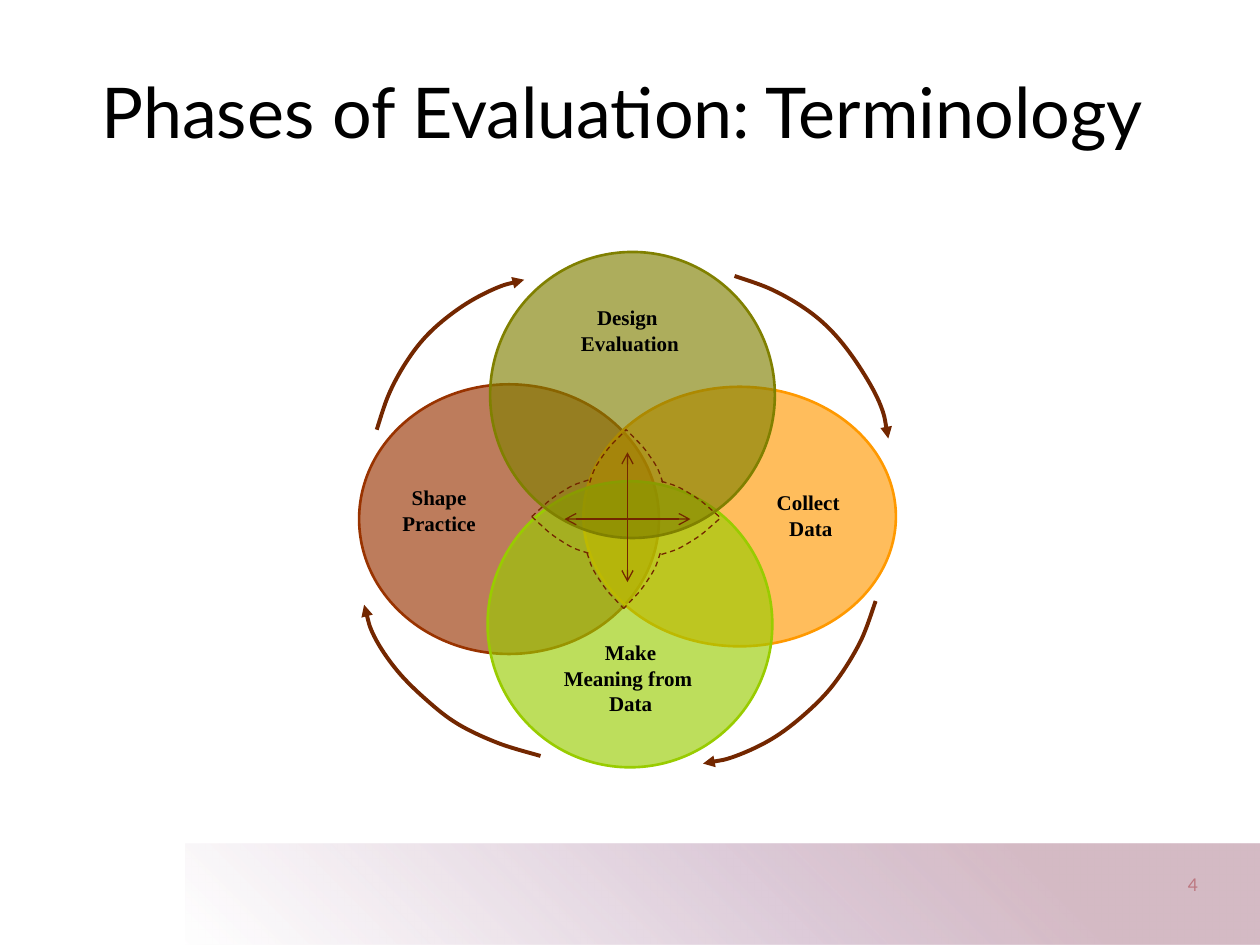
from dataclasses import dataclass
from typing import NamedTuple

from lxml.etree import SubElement
from pptx import Presentation
from pptx.dml.color import RGBColor
from pptx.enum.dml import MSO_LINE
from pptx.enum.shapes import MSO_CONNECTOR, MSO_SHAPE
from pptx.enum.text import MSO_ANCHOR, MSO_AUTO_SIZE, PP_ALIGN
from pptx.oxml import parse_xml
from pptx.oxml.ns import nsdecls, qn
from pptx.util import Inches, Pt

Point = tuple[float, float]


@dataclass(frozen=True)
class Theme:
    heading_font: str = "Lato"
    label_font: str = "Times New Roman"
    title_size: float = 40
    label_size: float = 12
    number_size: float = 10
    text: str = "000000"
    number: str = "C0504D"
    arrow: str = "732700"
    opacity: int = 64
    # Footer gradient stops: position, colour, opacity
    footer: tuple = ((20, "BA8FA0", 61), (46, "CBB0C5", 66), (100, "FFFFFF", 61))


class Box(NamedTuple):
    left: float
    top: float
    width: float
    height: float

    def lengths(self) -> list[int]:
        return [Inches(value) for value in self]


class Circle(NamedTuple):
    box: Box
    color: str
    rotation: int = 0


class Label(NamedTuple):
    box: Box
    text: str


class Petal(NamedTuple):
    tip: Point
    direction: tuple[int, int]
    length: float


THEME = Theme()

CIRCLES = [
    Circle(Box(2.97, 2.93, 2.14, 2.38), "993300", 270),
    Circle(Box(4.84, 2.86, 2.06, 2.48), "FF9900", 90),
    Circle(Box(3.87, 3.82, 2.26, 2.27), "99CC00"),
    Circle(Box(3.89, 2, 2.26, 2.27), "808000"),
]
LABELS = [
    Label(Box(5.83, 3.84, 1.21, 0.66), "Collect \nData"),
    Label(Box(4.05, 5.03, 1.91, 0.85), "Make\nMeaning from \nData"),
    Label(Box(4.06, 2.37, 1.88, 0.78), "Design \nEvaluation"),
    Label(Box(2.88, 3.8, 1.21, 0.79), "Shape Practice"),
]
CYCLE_ARCS = [
    [(5.83, 2.19), (6.13, 2.3), (6.42, 2.47), (6.64, 2.67), (6.84, 2.94), (6.99, 3.22), (7.05, 3.48)],
    [(6.95, 4.77), (6.83, 5.09), (6.64, 5.4), (6.43, 5.63), (6.15, 5.85), (5.84, 6), (5.58, 6.06)],
    [(4.29, 6), (3.96, 5.9), (3.64, 5.75), (3.39, 5.56), (3.15, 5.32), (2.97, 5.05), (2.89, 4.8)],
    [(2.99, 3.41), (3.09, 3.12), (3.24, 2.85), (3.42, 2.63), (3.67, 2.43), (3.93, 2.29), (4.16, 2.22)],
]
PETALS = [
    Petal((5.72, 4.11), (1, 0), 0.47),
    Petal((4.22, 4.1), (-1, 0), 0.45),
    Petal((4.95, 4.83), (0, 1), 0.44),
    Petal((4.97, 3.41), (0, -1), 0.42),
]
# Half a petal: share of its length back from the tip, and inches to the side
PETAL_PROFILE = [(1, 0.29), (0.74, 0.25), (0.51, 0.19), (0.32, 0.13), (0.17, 0.07), (0, 0)]
CROSS_ARROWS = [((4.48, 4.12), (5.48, 4.12)), ((4.98, 4.62), (4.98, 3.59))]


def write_text(frame, text: str, *, font: str, size: float, color: str, bold=False,
               align=PP_ALIGN.CENTER, anchor=MSO_ANCHOR.TOP, wrap=True) -> None:
    frame.word_wrap = wrap
    frame.vertical_anchor = anchor
    paragraph = frame.paragraphs[0]
    paragraph.text = text
    paragraph.alignment = align
    for run in paragraph.runs:
        run.font.name, run.font.size, run.font.bold = font, Pt(size), bold
        run.font.color.rgb = RGBColor.from_string(color)


def style_line(line, color: str, width: float, *, dashed=False, head="", tail="") -> None:
    line.color.rgb = RGBColor.from_string(color)
    line.width = Pt(width)
    if dashed:
        line.dash_style = MSO_LINE.DASH
    for tag, kind in (("a:headEnd", head), ("a:tailEnd", tail)):
        if kind:
            SubElement(line._get_or_add_ln(), qn(tag), type=kind)


def draw_footer(slide, box: Box) -> None:
    shape = slide.shapes.add_shape(MSO_SHAPE.RECTANGLE, *box.lengths())
    shape.shadow.inherit = False
    shape.line.fill.background()
    stops = "".join(
        f'<a:gs pos="{position * 1000}"><a:srgbClr val="{color}">'
        f'<a:alpha val="{opacity * 1000}"/></a:srgbClr></a:gs>'
        for position, color, opacity in THEME.footer)
    gradient = parse_xml(
        f'<a:gradFill {nsdecls("a")} rotWithShape="1"><a:gsLst>{stops}</a:gsLst>'
        '<a:path path="circle"><a:fillToRect l="100000" b="100000"/></a:path></a:gradFill>')
    shape._element.spPr.find(qn("a:prstGeom")).addnext(gradient)


def draw_circle(slide, circle: Circle) -> None:
    shape = slide.shapes.add_shape(MSO_SHAPE.OVAL, *circle.box.lengths())
    shape.rotation = circle.rotation
    shape.shadow.inherit = False
    shape.fill.solid()
    shape.fill.fore_color.rgb = RGBColor.from_string(circle.color)
    fill_color = shape._element.spPr.find(qn("a:solidFill"))[0]
    SubElement(fill_color, qn("a:alpha"), val=str(THEME.opacity * 1000))
    style_line(shape.line, circle.color, 1.5)


def bezier_points(nodes: list[Point]) -> list[Point]:
    """Two control points and an end point for each step between nodes."""
    padded = [nodes[0], *nodes, nodes[-1]]
    points = []
    for a, b, c, d in zip(padded, padded[1:], padded[2:], padded[3:]):
        points += [(b[0] + (c[0] - a[0]) / 6, b[1] + (c[1] - a[1]) / 6),
                   (c[0] - (d[0] - b[0]) / 6, c[1] - (d[1] - b[1]) / 6), c]
    return points


def draw_curve(slide, nodes: list[Point], width: float, *, dashed=False, tail="") -> None:
    builder = slide.shapes.build_freeform(*[Inches(value) for value in nodes[0]])
    builder.add_line_segments(
        [(Inches(x), Inches(y)) for x, y in bezier_points(nodes)], close=False)
    shape = builder.convert_to_shape()
    # Join each three straight steps into one cubic curve
    outline = next(shape._element.iter(qn("a:path")))
    steps = outline.findall(qn("a:lnTo"))
    for first in range(0, len(steps), 3):
        curve = SubElement(outline, qn("a:cubicBezTo"))
        for step in steps[first:first + 3]:
            curve.append(step[0])
            outline.remove(step)
    shape.shadow.inherit = False
    shape.fill.background()
    style_line(shape.line, THEME.arrow, width, dashed=dashed, tail=tail)


def draw_petal(slide, petal: Petal) -> None:
    (tip_x, tip_y), (along_x, along_y) = petal.tip, petal.direction
    for side in (1, -1):
        nodes = [(tip_x - along_x * back * petal.length + along_y * side * out,
                  tip_y - along_y * back * petal.length + along_x * side * out)
                 for back, out in PETAL_PROFILE]
        draw_curve(slide, nodes, 0.75, dashed=True)


def draw_double_arrow(slide, start: Point, end: Point) -> None:
    connector = slide.shapes.add_connector(
        MSO_CONNECTOR.STRAIGHT, *[Inches(value) for value in (*start, *end)])
    style_line(connector.line, THEME.arrow, 0.75, head="arrow", tail="arrow")
    SubElement(connector._element.spPr, qn("a:effectLst"))


def main() -> None:
    presentation = Presentation()
    presentation.slide_width, presentation.slide_height = Inches(10), Inches(7.5)
    slide = presentation.slides.add_slide(presentation.slide_layouts[5])

    # Page number and footer band
    number = slide.shapes.add_textbox(*Box(9.33, 6.89, 0.43, 0.27).lengths())
    write_text(number.text_frame, "4", font=THEME.heading_font, size=THEME.number_size,
               color=THEME.number, align=PP_ALIGN.LEFT, wrap=False)
    number.text_frame.auto_size = MSO_AUTO_SIZE.SHAPE_TO_FIT_TEXT
    draw_footer(slide, Box(1.47, 6.7, 8.53, 0.8))

    # Title
    title = slide.shapes.title
    title.left, title.top, title.width, title.height = Box(0, 0.49, 10, 0.77).lengths()
    write_text(title.text_frame, "Phases of Evaluation: Terminology ", font=THEME.heading_font,
               size=THEME.title_size, color=THEME.text, anchor=MSO_ANCHOR.MIDDLE)

    # Overlapping phases and their labels
    for circle in CIRCLES:
        draw_circle(slide, circle)
    for label in LABELS:
        text_box = slide.shapes.add_textbox(*label.box.lengths())
        write_text(text_box.text_frame, label.text, font=THEME.label_font,
                   size=THEME.label_size, color=THEME.text, bold=True)

    # Cycle arrows, dashed overlap and central cross
    for nodes in CYCLE_ARCS:
        draw_curve(slide, nodes, 2.25, tail="triangle")
    for petal in PETALS:
        draw_petal(slide, petal)
    for start, end in CROSS_ARROWS:
        draw_double_arrow(slide, start, end)

    presentation.save("out.pptx")


if __name__ == "__main__":
    main()
